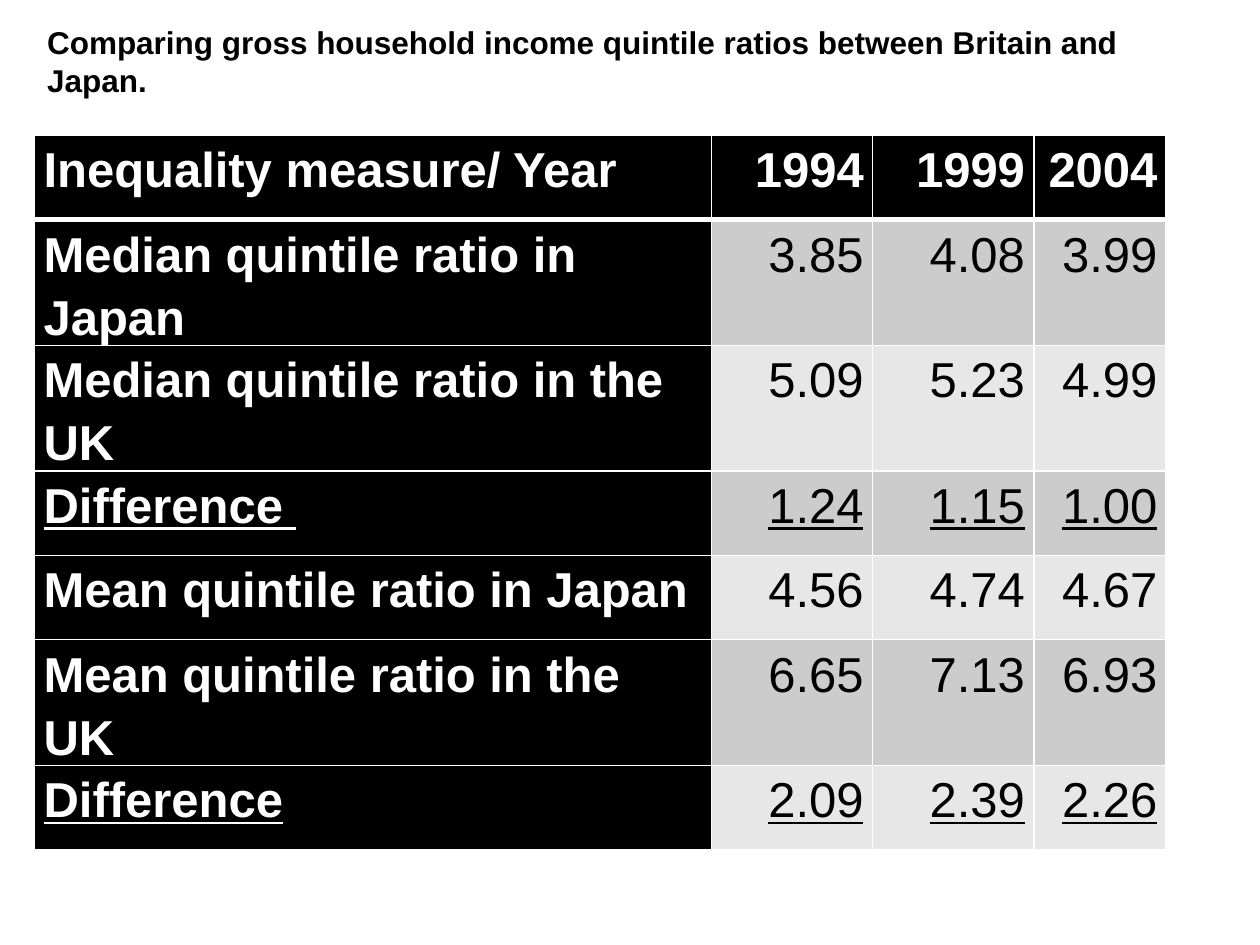
from lxml import etree
from pptx import Presentation, util as u
from pptx.dml.color import RGBColor
from pptx.enum import text
from pptx.oxml import ns

COLOURS = {"ink": "000000", "paper": "FFFFFF", "odd": "CCCCCC", "even": "E7E7E7"}
HEADING = "Comparing gross household income quintile ratios between Britain and Japan."
RATIOS = [
    ("Inequality measure/ Year", "1994", "1999", "2004"),
    ("Median quintile ratio in Japan", "3.85", "4.08", "3.99"),
    ("Median quintile ratio in the UK", "5.09", "5.23", "4.99"),
    ("Difference ", "1.24", "1.15", "1.00"),
    ("Mean quintile ratio in Japan", "4.56", "4.74", "4.67"),
    ("Mean quintile ratio in the UK", "6.65", "7.13", "6.93"),
    ("Difference", "2.09", "2.39", "2.26"),
]
COLUMN_WIDTHS = (13.64, 3.25, 3.25, 2.67)
ROW_HEIGHT = 1.7


def apply(target, values):
    """Set each named attribute of the target."""
    for name, value in values.items():
        setattr(target, name, value)


def write(paragraph, wording, colour, **font):
    """Write one run of Arial in the given colour."""
    run = paragraph.add_run()
    run.text = wording
    apply(run.font, {"name": "Arial", **font})
    run.font.color.rgb = RGBColor.from_string(COLOURS[colour])


def add_border(cell, side, points):
    """Draw one white edge of a cell."""
    edge = etree.SubElement(cell._tc.get_or_add_tcPr(), ns.qn(f"a:ln{side}"),
                            w=str(u.Pt(points)))
    fill = etree.SubElement(edge, ns.qn("a:solidFill"))
    etree.SubElement(fill, ns.qn("a:srgbClr"), val=COLOURS["paper"])


def fill_cell(cell, wording, row, column):
    """Format and write one cell according to its place."""
    is_label = row == 0 or column == 0
    apply(cell, {"margin_left": u.Cm(0.18), "margin_right": u.Cm(0.18),
                 "margin_top": 0, "margin_bottom": 0})
    for side in "LRTB":
        under_header = (row, side) in ((0, "B"), (1, "T"))
        add_border(cell, side, 3 if under_header else 1)
    shade = "ink" if is_label else ("odd" if row % 2 else "even")
    cell.fill.solid()
    cell.fill.fore_color.rgb = RGBColor.from_string(COLOURS[shade])
    paragraph = cell.text_frame.paragraphs[0]
    align = text.PP_ALIGN.RIGHT if column else text.PP_ALIGN.LEFT
    apply(paragraph, {"alignment": align, "line_spacing": 1.15, "space_after": u.Pt(10)})
    write(paragraph, wording, "paper" if is_label else "ink", size=u.Pt(28),
          bold=is_label, underline=RATIOS[row][0].startswith("Difference"))


def add_ratio_table(slide):
    """Add the table of quintile ratios."""
    table = slide.shapes.add_table(
        len(RATIOS), len(COLUMN_WIDTHS), u.Cm(0.7), u.Cm(2.73),
        u.Cm(sum(COLUMN_WIDTHS)), u.Cm(ROW_HEIGHT * len(RATIOS))).table
    for column, width in zip(table.columns, COLUMN_WIDTHS):
        column.width = u.Cm(width)
    for row, entries in enumerate(RATIOS):
        table.rows[row].height = u.Cm(ROW_HEIGHT)
        for column, wording in enumerate(entries):
            fill_cell(table.cell(row, column), wording, row, column)


def add_heading(slide):
    """Add the heading above the table."""
    frame = slide.shapes.add_textbox(u.Cm(0.7), u.Cm(0.34), u.Cm(23.8), u.Cm(1.8)).text_frame
    apply(frame, {"word_wrap": True, "auto_size": text.MSO_AUTO_SIZE.SHAPE_TO_FIT_TEXT})
    write(frame.paragraphs[0], HEADING, "ink", size=u.Pt(18), bold=True)


def main():
    """Build and save the slide."""
    deck = Presentation()
    apply(deck, {"slide_width": u.Cm(25.4), "slide_height": u.Cm(19.05)})
    slide = deck.slides.add_slide(deck.slide_layouts[6])
    add_ratio_table(slide)
    add_heading(slide)
    deck.save("out.pptx")


if __name__ == "__main__":
    main()
